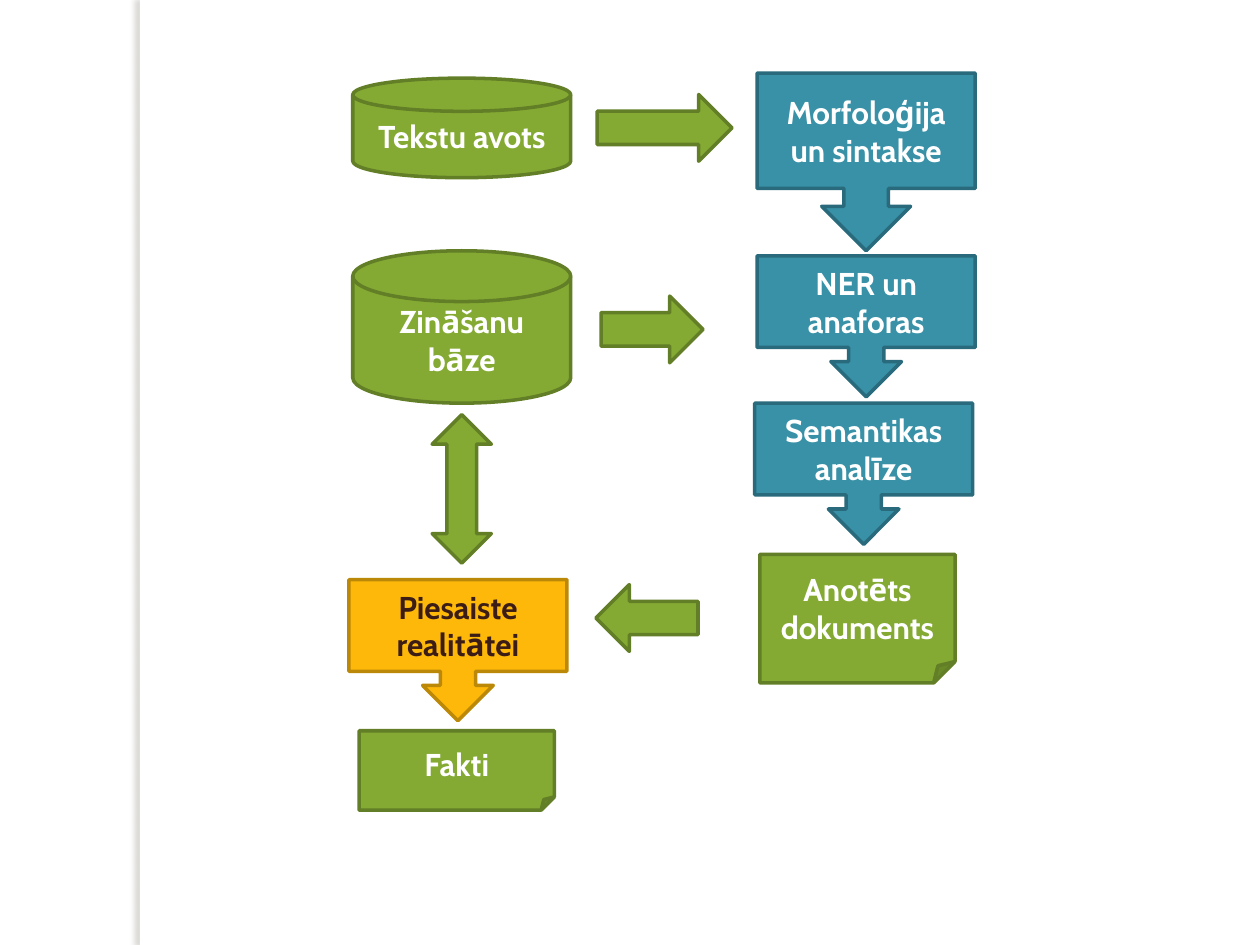
from lxml import etree
from pptx import Presentation
from pptx import util as u
from pptx.dml.color import RGBColor
from pptx.enum import shapes, text
from pptx.oxml.ns import qn

KIND = shapes.MSO_SHAPE
GREEN = ("84AA33", "627E26", "FFFFFF")
TEAL = ("3891A7", "296B7C", "FFFFFF")
AMBER = ("FEB80A", "BC8807", "3B1D15")


def color(value):
    return RGBColor.from_string(value)


class FlowSlide:
    font = "Cabin"
    size = 18
    line_width = 2

    def __init__(self, deck):
        self.slide = deck.slides.add_slide(deck.slide_layouts[6])

    def shape(self, kind, place, fill, line=None):
        shape = self.slide.shapes.add_shape(kind, *map(u.Inches, place))
        shape.shadow.inherit = False
        shape.fill.solid()
        shape.fill.fore_color.rgb = color(fill)
        if line:
            shape.line.color.rgb = color(line)
            shape.line.width = u.Pt(self.line_width)
        else:
            shape.line.fill.background()
        return shape

    def arrow(self, kind, place):
        return self.shape(kind, place, *GREEN[:2])

    def step(self, kind, place, words, scheme=GREEN, space_before=0):
        """Draw a labelled stage of the flow in a (fill, line, text) scheme."""
        fill, line, ink = scheme
        shape = self.shape(kind, place, fill, line)
        frame = shape.text_frame
        frame.word_wrap = True
        frame.vertical_anchor = text.MSO_ANCHOR.MIDDLE
        frame.text = words
        para = frame.paragraphs[0]
        para.alignment = text.PP_ALIGN.CENTER
        para.space_before = u.Pt(space_before)
        span = para.runs[0]
        span.font.name = self.font
        span.font.size = u.Pt(self.size)
        span.font.bold = True
        span.font.color.rgb = color(ink)

    def side_strip(self, place):
        """Draw the white strip that casts a soft shadow to its left."""
        strip = self.shape(KIND.RECTANGLE, place, "FFFFFF")
        effects = strip._element.spPr.find(qn("a:effectLst"))
        shadow = etree.SubElement(
            effects, qn("a:outerShdw"), blurRad=str(u.Pt(3)),
            dist=str(u.Pt(3)), dir=str(180 * 60000), algn="tl", rotWithShape="0")
        tint = etree.SubElement(shadow, qn("a:srgbClr"), val="736F63")
        etree.SubElement(tint, qn("a:alpha"), val="25000")


def main():
    deck = Presentation()
    deck.slide_width, deck.slide_height = u.Inches(10), u.Inches(7.5)
    flow = FlowSlide(deck)
    flow.side_strip((1.11, 0, 0.08, 7.5))

    disk, callout, sheet = (KIND.FLOWCHART_MAGNETIC_DISK,
                            KIND.DOWN_ARROW_CALLOUT, KIND.FOLDED_CORNER)
    wide, narrow = 1.73, 1.55

    flow.step(disk, (2.8, 0.62, wide, 0.79), "Tekstu avots")
    flow.step(disk, (2.8, 1.99, wide, 1.21), "Zināšanu bāze", space_before=6)

    for left, top, height, words in (
            (6.01, 0.58, 1.41, "Morfoloģija un sintakse"),
            (6.01, 2.03, 1.12, "NER un anaforas"),
            (5.99, 3.2, 1.12, "Semantikas analīze")):
        flow.step(callout, (left, top, wide, height), words, TEAL)

    flow.step(sheet, (6.03, 4.4, narrow, 1.02), "Anotēts dokuments")
    flow.step(callout, (2.77, 4.6, wide, 1.12), "Piesaiste realitātei", AMBER)
    flow.step(sheet, (2.85, 5.8, narrow, 0.63), "Fakti")

    for kind, left, top, width in (
            (KIND.RIGHT_ARROW, 4.74, 0.75, 1.07),
            (KIND.RIGHT_ARROW, 4.77, 2.35, 0.81),
            (KIND.LEFT_ARROW, 4.73, 4.64, 0.81)):
        flow.arrow(kind, (left, top, width, 0.53))
    flow.arrow(KIND.UP_DOWN_ARROW, (3.43, 3.29, 0.47, 1.18))

    deck.save("out.pptx")


if __name__ == "__main__":
    main()
